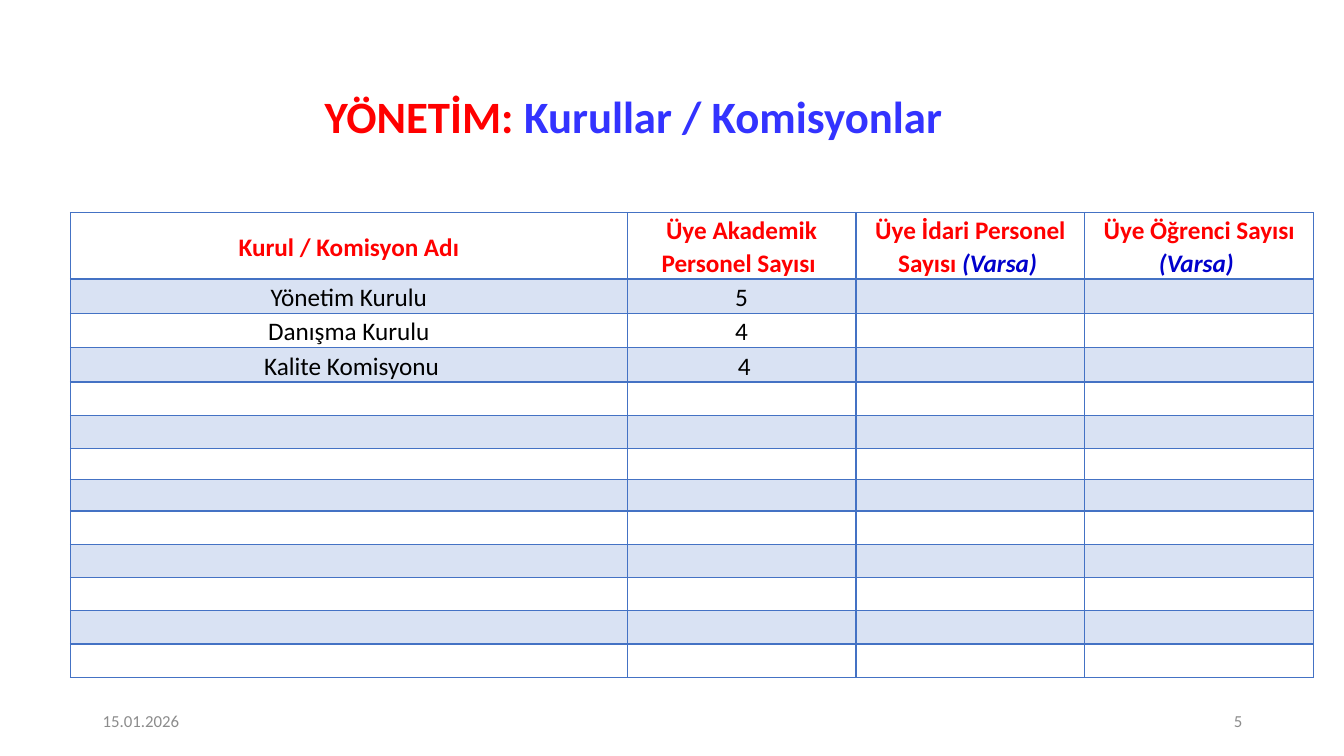
from lxml.etree import SubElement
from pptx import Presentation
from pptx.dml.color import RGBColor
from pptx.enum.text import MSO_ANCHOR, PP_ALIGN
from pptx.oxml.ns import qn
from pptx.util import Inches, Pt

RED, BLUE, NAVY, GRAY, BLACK = "FF0000", "3333FF", "0000CC", "8C8C8C", "000000"
GRID = "4472C4"


def color(value):
    return RGBColor.from_string(value)


class BoardSlide:
    font_name = "Calibri"

    def __init__(self, slide):
        self.slide = slide

    def fill_paragraph(self, paragraph, parts, size, bold=False,
                       align=PP_ALIGN.CENTER, spacing=1.0):
        paragraph.alignment = align
        paragraph.line_spacing = spacing
        paragraph.font.name = self.font_name
        paragraph.font.size = Pt(size)
        paragraph.font.bold = bold
        if len(parts) == 1:
            paragraph.font.color.rgb = color(parts[0][1])
        for words, tint, *italic in parts:
            run = paragraph.add_run()
            run.text = words
            if len(parts) > 1:
                run.font.color.rgb = color(tint)
            if italic:
                run.font.italic = True

    def text(self, left, top, width, height, parts, size, **style):
        box = self.slide.shapes.add_textbox(
            Inches(left), Inches(top), Inches(width), Inches(height))
        frame = box.text_frame
        frame.word_wrap = True
        frame.vertical_anchor = MSO_ANCHOR.MIDDLE
        self.fill_paragraph(frame.paragraphs[0], parts, size, **style)

    def border(self, cell, side, weight):
        line = SubElement(cell._tc.get_or_add_tcPr(), qn(f"a:ln{side}"), w=str(Pt(weight)))
        fill = SubElement(line, qn("a:solidFill"))
        SubElement(fill, qn("a:srgbClr"), val=GRID)

    def cell(self, cell, parts, row, column):
        cell.margin_left = cell.margin_right = Inches(0.01 if column else 0.05)
        cell.margin_top, cell.margin_bottom = Inches(0.01), 0
        cell.vertical_anchor = MSO_ANCHOR.MIDDLE
        for side in "LRTB":
            under_header = (row, side) in ((0, "B"), (1, "T"))
            self.border(cell, side, 2 if under_header else 1)
        if row % 2:
            cell.fill.solid()
            cell.fill.fore_color.rgb = color(GRID)
            tint = cell._tc.tcPr.find(qn("a:solidFill"))[0]
            SubElement(tint, qn("a:alpha"), val="20000")
        else:
            cell.fill.background()
        self.fill_paragraph(cell.text_frame.paragraphs[0], parts, 18, bold=row == 0,
                            spacing=1.07 if parts else 1.0)

    def table(self, left, top, widths, heights, content):
        grid = self.slide.shapes.add_table(
            len(heights), len(widths), Inches(left), Inches(top),
            Inches(sum(widths)), Inches(sum(heights))).table
        grid.first_row = grid.horz_banding = False
        for column, width in zip(grid.columns, widths):
            column.width = Inches(width)
        for row, height in enumerate(heights):
            grid.rows[row].height = Inches(height)
            for column in range(len(widths)):
                self.cell(grid.cell(row, column), content.get((row, column), []), row, column)


def main():
    deck = Presentation()
    deck.slide_width, deck.slide_height = Inches(13.33), Inches(7.5)
    board = BoardSlide(deck.slides.add_slide(deck.slide_layouts[6]))

    board.text(0.7, 0.78, 11.17, 0.8,
               [("YÖNETİM: ", RED), ("Kurullar / Komisyonlar", BLUE)],
               32, bold=True, spacing=0.9)

    optional = ("(Varsa) ", NAVY, True)
    headers = [
        [("Kurul / Komisyon Adı", RED)],
        [("Üye Akademik Personel Sayısı ", RED)],
        [("Üye İdari Personel Sayısı ", RED), optional],
        [("Üye Öğrenci Sayısı ", RED), optional],
    ]
    members = [("Yönetim Kurulu", "5"), ("Danışma Kurulu", "4"), (" Kalite Komisyonu", " 4")]
    content = {(0, column): parts for column, parts in enumerate(headers)}
    for row, entry in enumerate(members, 1):
        for column, words in enumerate(entry):
            content[row, column] = [(words, BLACK)]

    heights = [0.66] + [0.34] * 3 + [0.33] * 2 + [0.3] * 2 + [0.33] * 5
    board.table(0.7, 2.11, [5.52] + [2.27] * 3, heights, content)

    board.text(0.92, 6.95, 3, 0.4, [("15.01.2026", GRAY)], 12, align=PP_ALIGN.LEFT)
    board.text(9.42, 6.95, 3, 0.4, [("5", GRAY)], 12, align=PP_ALIGN.RIGHT)
    deck.save("out.pptx")


if __name__ == "__main__":
    main()
